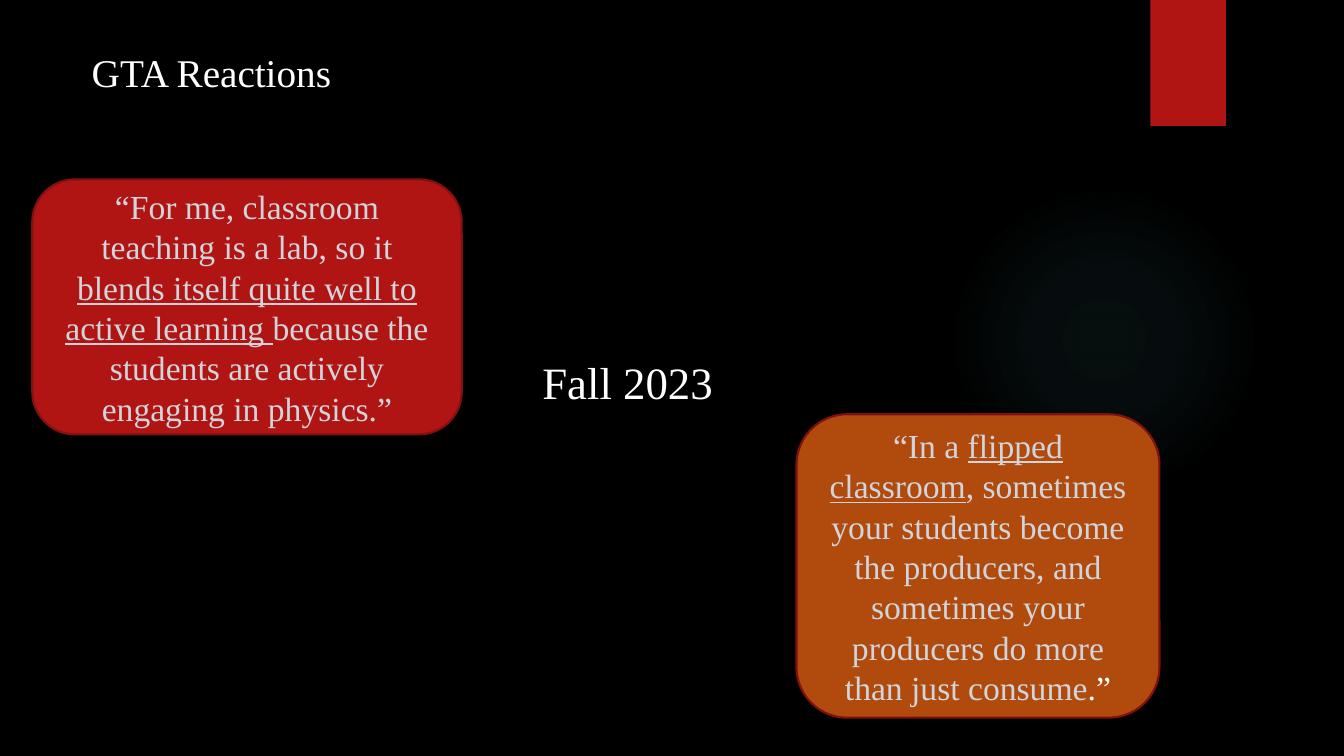
import dataclasses

import lxml.etree
import pptx
import pptx.dml.color
import pptx.enum.shapes
import pptx.enum.text
import pptx.oxml
import pptx.oxml.ns
import pptx.util

Inches = pptx.util.Inches
SHAPES = pptx.enum.shapes.MSO_SHAPE
ANCHOR = pptx.enum.text.MSO_ANCHOR
ALIGN = pptx.enum.text.PP_ALIGN
AUTO_SIZE = pptx.enum.text.MSO_AUTO_SIZE


@dataclasses.dataclass(frozen=True)
class Theme:
    font: str = "Times New Roman"
    background: str = "000000"
    heading: str = "FFFFFF"
    quote: str = "D1D5DB"
    red: str = "B01513"
    orange: str = "B04A0D"
    border: str = "82100E"
    glow: str = "50B9C1"
    title_size: int = 28
    term_size: int = 32
    quote_size: int = 24


THEME = Theme()


def rgb(value):
    return pptx.dml.color.RGBColor.from_string(value)


def write_text(shape, runs, size, color, align=ALIGN.LEFT, anchor=ANCHOR.TOP,
               wrap=True, auto_size=AUTO_SIZE.NONE):
    frame = shape.text_frame
    frame.word_wrap = wrap
    frame.auto_size = auto_size
    frame.vertical_anchor = anchor
    paragraph = frame.paragraphs[0]
    paragraph.alignment = align
    for text, changes in runs:
        run = paragraph.add_run()
        run.text = text
        run.font.name = THEME.font
        run.font.size = pptx.util.Pt(size)
        run.font.color.rgb = rgb(changes.get("color", color))
        run.font.underline = changes.get("underline", False)


def add_filled_shape(slide, kind, box, fill, line=None):
    shape = slide.shapes.add_shape(kind, *map(Inches, box))
    shape.shadow.inherit = False
    shape.fill.solid()
    shape.fill.fore_color.rgb = rgb(fill)
    if line:
        shape.line.color.rgb = rgb(line)
        shape.line.width = pptx.util.Pt(1.5)
    else:
        shape.line.fill.background()
    return shape


def add_glow(slide, box):
    shape = add_filled_shape(slide, SHAPES.OVAL, box, THEME.glow)
    stops = "".join(
        f'<a:gs pos="{position * 1000}"><a:srgbClr val="{THEME.glow}">'
        f'<a:alpha val="{alpha * 1000}"/></a:srgbClr></a:gs>'
        for position, alpha in ((0, 7), (36, 6), (69, 0), (100, 0))
    )
    gradient = pptx.oxml.parse_xml(
        f'<a:gradFill {pptx.oxml.ns.nsdecls("a")} rotWithShape="1">'
        f'<a:gsLst>{stops}</a:gsLst><a:path path="circle">'
        '<a:fillToRect l="50000" t="50000" r="50000" b="50000"/>'
        '</a:path></a:gradFill>'
    )
    properties = shape.element.spPr
    solid = properties.find(pptx.oxml.ns.qn("a:solidFill"))
    properties.replace(solid, gradient)


def add_title(slide, box, text):
    title = slide.shapes.title
    title.left, title.top, title.width, title.height = map(Inches, box)
    write_text(title, [(text, {})], THEME.title_size, THEME.heading)


def add_term(slide, box, text):
    term = slide.shapes.add_textbox(*map(Inches, box))
    write_text(term, [(text, {})], THEME.term_size, THEME.heading,
               wrap=False, auto_size=AUTO_SIZE.SHAPE_TO_FIT_TEXT)


def add_quote(slide, box, fill, runs):
    card = add_filled_shape(slide, SHAPES.ROUNDED_RECTANGLE, box, fill, THEME.border)
    write_text(card, runs, THEME.quote_size, THEME.quote,
               align=ALIGN.CENTER, anchor=ANCHOR.MIDDLE)


def build_reactions_slide(presentation):
    slide = presentation.slides.add_slide(presentation.slide_layouts[5])
    slide.background.fill.solid()
    slide.background.fill.fore_color.rgb = rgb(THEME.background)
    add_glow(slide, (9.41, 1.83, 3.08, 3.08))
    add_filled_shape(slide, SHAPES.RECTANGLE, (11.41, 0, 0.75, 1.25), THEME.red)
    add_title(slide, (0.81, 0.43, 2.7, 0.57), "GTA Reactions")
    add_term(slide, (5.28, 3.47, 1.91, 0.64), "Fall 2023")
    add_quote(slide, (7.9, 4.11, 3.6, 3.01), THEME.orange, [
        ("“In a ", {}),
        ("flipped classroom", {"underline": True}),
        (", sometimes your students become the producers, and sometimes "
         "your producers do more than just consume", {}),
        (".”", {"color": THEME.heading}),
    ])
    add_quote(slide, (0.32, 1.78, 4.26, 2.53), THEME.red, [
        ("“For me, classroom teaching is a lab, so it ", {}),
        ("blends itself quite well to active learning ", {"underline": True}),
        ("because the students are actively engaging in physics.”", {}),
    ])


def main():
    presentation = pptx.Presentation()
    presentation.slide_width = Inches(13.33)
    presentation.slide_height = Inches(7.5)
    build_reactions_slide(presentation)
    presentation.save("out.pptx")


if __name__ == "__main__":
    main()
